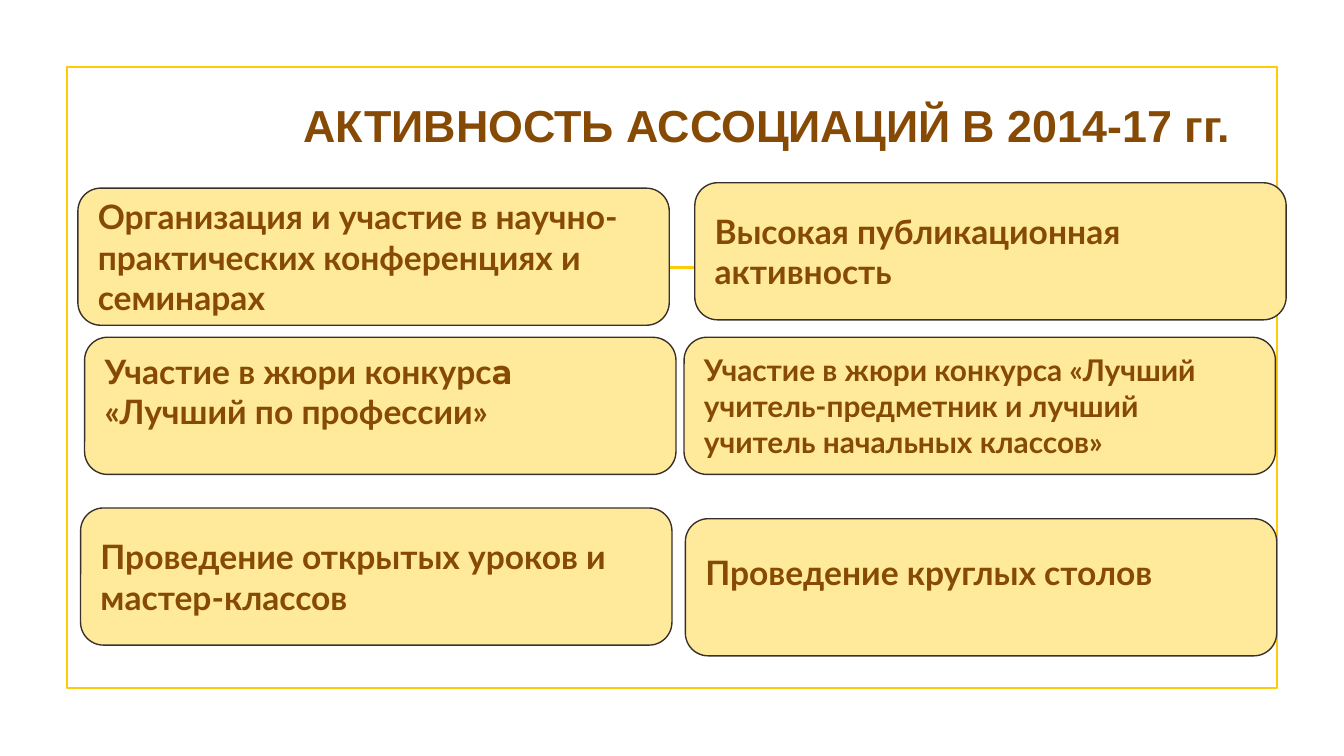
from lxml import etree
from pptx import Presentation
from pptx.dml.color import RGBColor
from pptx.enum import shapes, text
from pptx.oxml import ns
from pptx.util import Inches, Pt

BROWN, CREAM, GOLD, DARK = "864A04", "FFEA9C", "FFCA08", "39302A"


def color(value):
    return RGBColor.from_string(value)


def add_text(paragraph, wording, font_name, size):
    run = paragraph.add_run()
    run.text = wording
    for name, value in {"name": font_name, "size": Pt(size), "bold": True}.items():
        setattr(run.font, name, value)
    run.font.color.rgb = color(BROWN)


presentation = Presentation()
presentation.slide_width = Inches(10)
presentation.slide_height = Inches(10 * 9 / 16)
slide = presentation.slides.add_slide(presentation.slide_layouts[5])
title = slide.shapes.title

frame = slide.shapes.add_shape(
    shapes.MSO_SHAPE.RECTANGLE, Inches(0.5), Inches(0.5), Inches(9), Inches(4.62)
)
frame.shadow.inherit = False
frame.fill.background()
divider = slide.shapes.add_connector(
    shapes.MSO_CONNECTOR.STRAIGHT, Inches(1.15), Inches(1.99), Inches(8.86), Inches(1.99)
)
etree.SubElement(divider._element.spPr, ns.qn("a:effectLst"))
for shape in (frame, divider):
    shape.line.color.rgb = color(GOLD)
    shape.line.width = Pt(1.25)

title_place = {"left": 1.53, "top": 0.23, "width": 7.97, "height": 0.94}
for name, value in title_place.items():
    setattr(title, name, Inches(value))
title_format = {
    "margin_left": Inches(0.48),
    "margin_right": Inches(0.1),
    "margin_top": Inches(0.1),
    "margin_bottom": Inches(0.04),
    "vertical_anchor": text.MSO_ANCHOR.BOTTOM,
    "auto_size": text.MSO_AUTO_SIZE.NONE,
    "word_wrap": True,
}
for name, value in title_format.items():
    setattr(title.text_frame, name, value)
paragraph = title.text_frame.paragraphs[0]
paragraph.alignment = text.PP_ALIGN.CENTER
add_text(paragraph, "АКТИВНОСТЬ АССОЦИАЦИЙ В 2014-17 гг.", "Arial", 24)

activities = [
    (0.58, 1.4, 18, 0.1, [("Организация и участие в научно-практических конференциях и семинарах", "Lato")]),
    (5.17, 1.36, 18, 0.1, [("Высокая публикационная активность", "Lato")]),
    (0.63, 2.51, 18, 0.32, [
        ("Участие в жюри конкурс", "Lato"),
        ("а ", "Montserrat"),
        ("«Лучший по профессии»", "Lato"),
    ]),
    (5.09, 2.51, 16, 0.1, [
        ("Участие в жюри конкурса «Лучший учитель-предметник и лучший учитель начальных классов»", "Lato"),
    ]),
    (0.6, 3.78, 18, 0.1, [("Проведение открытых уроков и мастер-классов", "Lato")]),
    (5.1, 3.86, 18, 0.32, [("Проведение круглых столов", "Lato")]),
]
for left, top, size, bottom_margin, wordings in activities:
    card = slide.shapes.add_shape(
        shapes.MSO_SHAPE.ROUNDED_RECTANGLE, Inches(left), Inches(top), Inches(4.4), Inches(1.02)
    )
    card.shadow.inherit = False
    card.fill.solid()
    card.fill.fore_color.rgb = color(CREAM)
    card.line.color.rgb = color(DARK)
    card.line.width = Pt(0.75)
    card_format = {
        "margin_left": Inches(0.1),
        "margin_right": Inches(0.1),
        "margin_top": Inches(0.1),
        "margin_bottom": Inches(bottom_margin),
        "vertical_anchor": text.MSO_ANCHOR.MIDDLE,
        "word_wrap": True,
    }
    for name, value in card_format.items():
        setattr(card.text_frame, name, value)
    paragraph = card.text_frame.paragraphs[0]
    paragraph.alignment = text.PP_ALIGN.LEFT
    for wording, font_name in wordings:
        add_text(paragraph, wording, font_name, size)

presentation.save("out.pptx")
